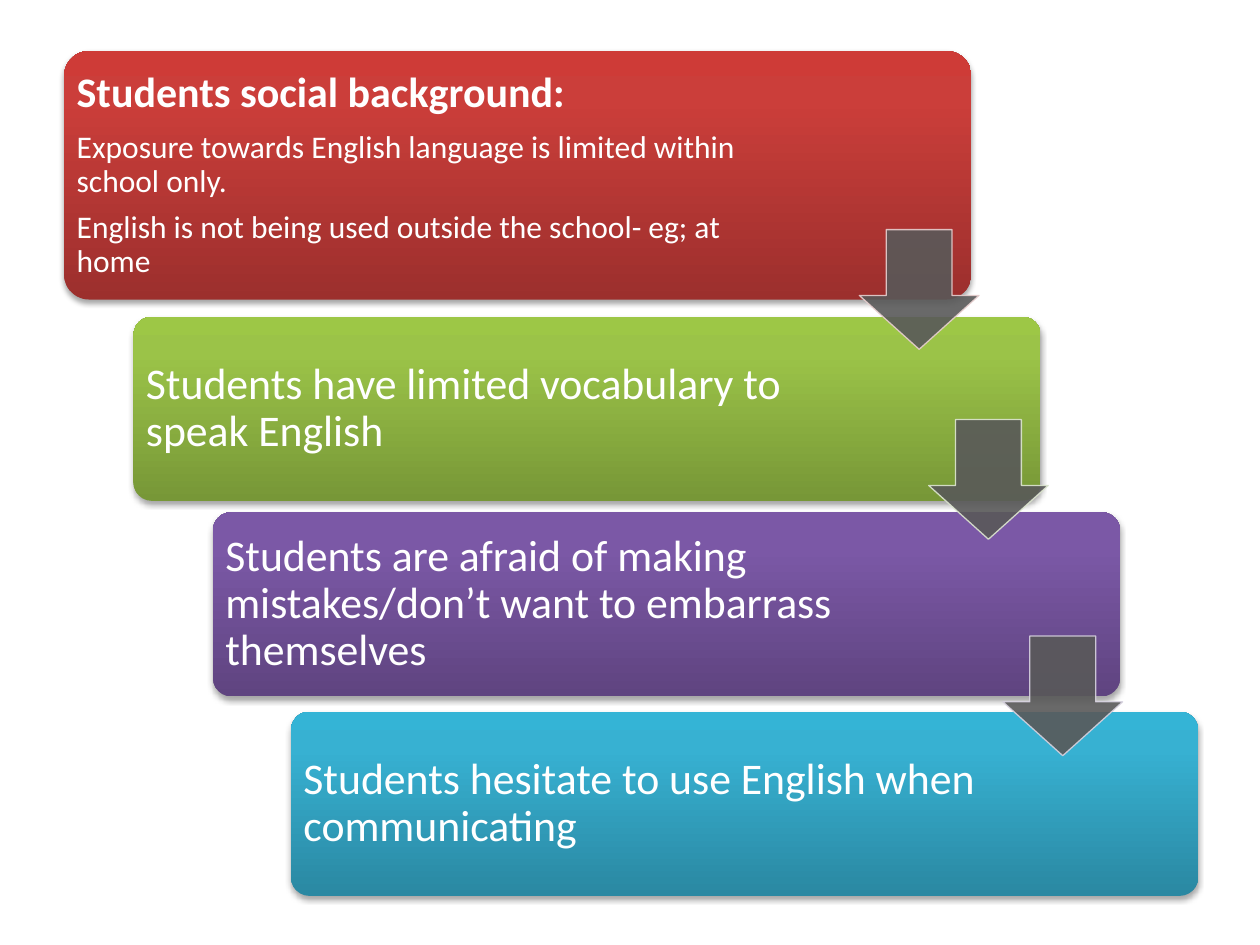
from dataclasses import dataclass

from lxml import etree
from pptx import Presentation
from pptx import util as u
from pptx.dml.color import RGBColor
from pptx.enum import shapes, text
from pptx.oxml import parse_xml
from pptx.oxml.ns import nsdecls, qn

SLIDE_W, SLIDE_H = u.Inches(10), u.Inches(7.5)
CARD_W = 0.72          # share of the slide width
TEXT_W = 0.565
ARROW = u.Inches(0.95)
FONT = "Calibri"
WHITE = RGBColor(0xFF, 0xFF, 0xFF)
GREY = RGBColor(0x59, 0x59, 0x59)


@dataclass
class Line:
    wording: str
    size: float = 25
    bold: bool = False


@dataclass
class Step:
    """One card; left, top and height are shares of the slide's size."""
    left: float
    top: float
    lines: list[Line]
    dark: RGBColor
    middle: RGBColor
    light: RGBColor
    height: float = 0.195


@dataclass
class Arrow:
    left: float
    top: float
    outline: RGBColor


STEPS = [
    Step(0.051, 0.054, [
        Line("Students social background:", 24, True),
        Line("Exposure towards English language is limited within school only.", 18),
        Line("English is not being used outside the school- eg; at home", 18),
    ], RGBColor(0x9C, 0x2F, 0x2D), RGBColor(0xCB, 0x3E, 0x3A),
        RGBColor(0xCE, 0x3B, 0x37), height=0.263),
    Step(0.106, 0.335, [Line("Students have limited vocabulary to speak English")],
         RGBColor(0x77, 0x97, 0x37), RGBColor(0x9B, 0xC3, 0x48), RGBColor(0x9D, 0xC7, 0x46)),
    Step(0.169, 0.542,
         [Line("Students are afraid of making mistakes/don’t want to embarrass themselves")],
         RGBColor(0x5F, 0x44, 0x80), RGBColor(0x7B, 0x58, 0xA6), RGBColor(0x7C, 0x57, 0xA8)),
    Step(0.231, 0.753, [Line("Students hesitate to use English when communicating")],
         RGBColor(0x2A, 0x88, 0xA2), RGBColor(0x37, 0xB1, 0xD2), RGBColor(0x34, 0xB4, 0xD6)),
]
ARROWS = [
    Arrow(0.682, 0.243, RGBColor(0xE8, 0xD0, 0xD0)),
    Arrow(0.737, 0.444, RGBColor(0xDE, 0xE7, 0xD1)),
    Arrow(0.796, 0.673, RGBColor(0xD8, 0xD3, 0xE0)),
]


def across(share: float) -> int:
    return round(SLIDE_W * share)


def down(share: float) -> int:
    return round(SLIDE_H * share)


def set_gradient(shape, step: Step) -> None:
    """Fill from dark at the bottom to light at the top."""
    stops = "".join(
        f'<a:gs pos="{percent * 1000}"><a:srgbClr val="{colour}"/></a:gs>'
        for percent, colour in ((0, step.dark), (80, step.middle), (100, step.light)))
    gradient = parse_xml(
        f'<a:gradFill {nsdecls("a")} rotWithShape="1"><a:gsLst>{stops}</a:gsLst>'
        f'<a:lin ang="{270 * 60000}" scaled="0"/></a:gradFill>')
    shape.fill.background()
    properties = shape.element.spPr
    properties.replace(properties.find(qn("a:noFill")), gradient)


def set_shadow(shape) -> None:
    shape.shadow.inherit = False
    effects = shape.element.spPr.find(qn("a:effectLst"))
    effects.append(parse_xml(
        f'<a:outerShdw {nsdecls("a")} blurRad="{u.Pt(3.1)}" dist="{u.Pt(1.8)}" '
        f'dir="{90 * 60000}" rotWithShape="0"><a:srgbClr val="000000">'
        '<a:alpha val="35000"/></a:srgbClr></a:outerShdw>'))


def set_opacity(shape, percent: int) -> None:
    """Apply one opacity to both the fill and the outline."""
    for colour in shape.element.spPr.iter(qn("a:srgbClr")):
        etree.SubElement(colour, qn("a:alpha")).set("val", str(percent * 1000))


def draw_step(page, step: Step) -> None:
    left, top, height = across(step.left), down(step.top), down(step.height)
    card = page.shapes.add_shape(shapes.MSO_SHAPE.ROUNDED_RECTANGLE,
                                 left, top, across(CARD_W), height)
    card.adjustments[0] = 0.1
    card.line.fill.background()
    set_gradient(card, step)
    set_shadow(card)

    box = page.shapes.add_textbox(left, top, across(TEXT_W), height)
    frame = box.text_frame
    frame.word_wrap = True
    frame.vertical_anchor = text.MSO_ANCHOR.MIDDLE
    frame.margin_left = frame.margin_right = u.Inches(0.1)
    frame.margin_top = frame.margin_bottom = u.Inches(0.1)
    frame.text = "\n".join(line.wording for line in step.lines)
    for para, line in zip(frame.paragraphs, step.lines):
        para.line_spacing = 0.9
        para.space_after = u.Pt(line.size * 0.35)
        for span in para.runs:
            span.font.name = FONT
            span.font.size = u.Pt(line.size)
            span.font.bold = line.bold
            span.font.color.rgb = WHITE


def draw_arrow(page, arrow: Arrow) -> None:
    shape = page.shapes.add_shape(shapes.MSO_SHAPE.DOWN_ARROW,
                                  across(arrow.left), down(arrow.top), ARROW, ARROW)
    shape.adjustments[0] = 0.55
    shape.adjustments[1] = 0.45
    shape.fill.solid()
    shape.fill.fore_color.rgb = GREY
    shape.line.color.rgb = arrow.outline
    shape.line.width = u.Pt(0.75)
    shape.shadow.inherit = False
    set_opacity(shape, 90)


def main() -> None:
    deck = Presentation()
    deck.slide_width, deck.slide_height = SLIDE_W, SLIDE_H
    page = deck.slides.add_slide(deck.slide_layouts[6])
    for step in STEPS:
        draw_step(page, step)
    for arrow in ARROWS:
        draw_arrow(page, arrow)
    deck.save("out.pptx")


if __name__ == "__main__":
    main()
